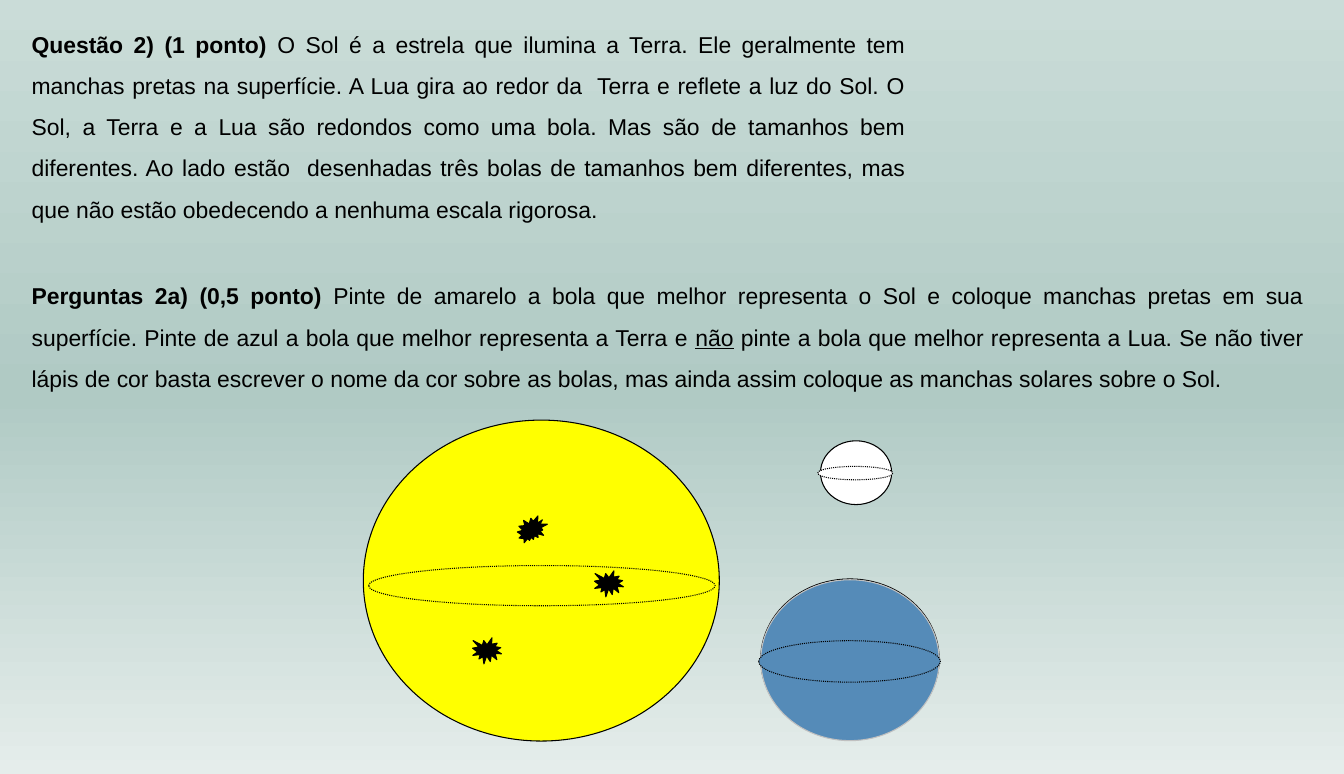
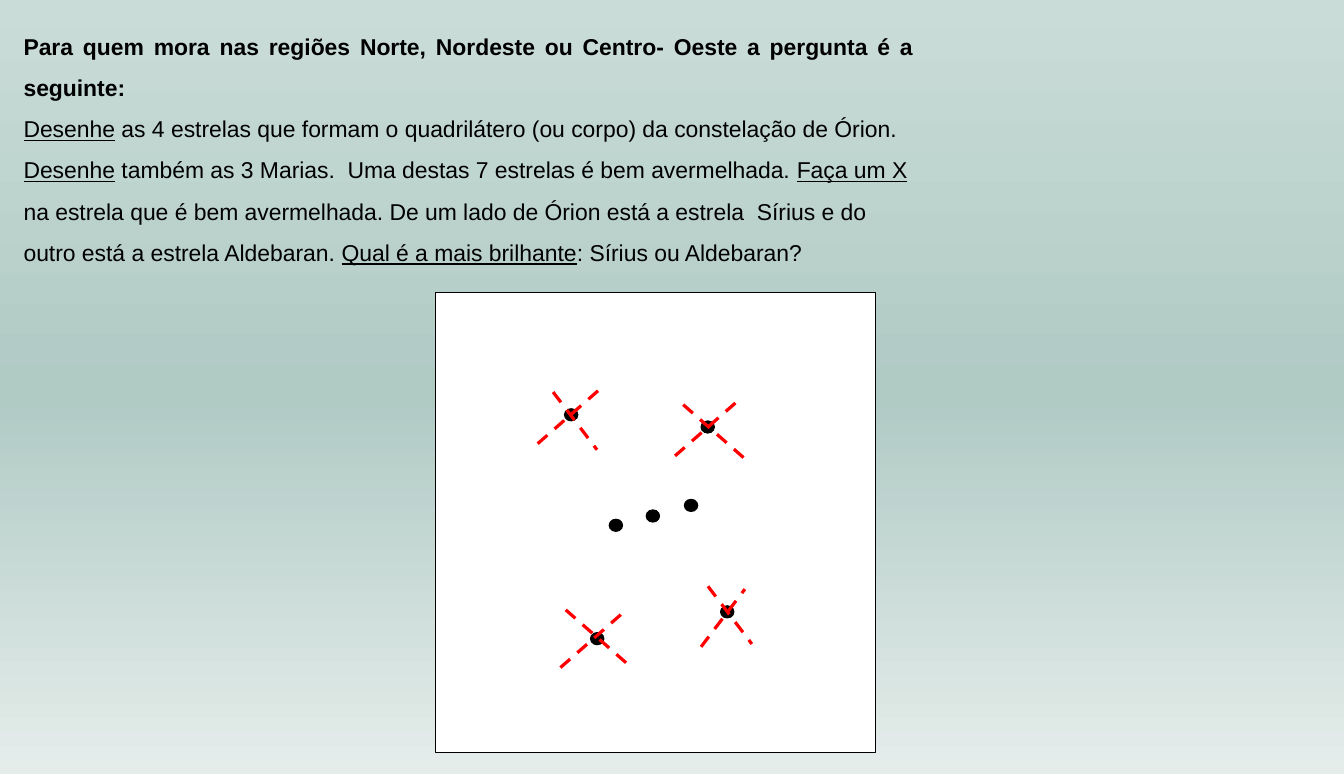
from dataclasses import dataclass

from lxml import etree
from pptx import Presentation
from pptx.dml.color import RGBColor
from pptx.enum.dml import MSO_LINE
from pptx.enum.shapes import MSO_CONNECTOR, MSO_SHAPE
from pptx.enum.text import MSO_AUTO_SIZE, PP_ALIGN
from pptx.oxml.ns import qn
from pptx.util import Cm, Pt

ELLIPSE = MSO_SHAPE.OVAL
RECTANGLE = MSO_SHAPE.RECTANGLE
SPOT = MSO_SHAPE.EXPLOSION1
LARGE_SPOT = MSO_SHAPE.EXPLOSION2
STRAIGHT = MSO_CONNECTOR.STRAIGHT
DOTTED = MSO_LINE.ROUND_DOT
DASHED = MSO_LINE.DASH
JUSTIFY = PP_ALIGN.JUSTIFY
LEFT = PP_ALIGN.LEFT
FIT_SHAPE = MSO_AUTO_SIZE.SHAPE_TO_FIT_TEXT

FONT = "Arial"
COLORS = {
    "black": "000000",
    "white": "FFFFFF",
    "sun": "FFFF00",
    "earth": "558BB8",
    "silver": "C0C0C0",
    "cross": "FF0000",
}
BACKGROUND_STOPS = ((0, "CADCD8"), (51, "B0CAC4"), (100, "E5EDEB"))

STAR_WIDTH, STAR_HEIGHT = 0.33, 0.3
STROKE_HEIGHT = 1.42
NARROW, WIDE = 1.08, 1.62


@dataclass(frozen=True)
class Box:
    left: float
    top: float
    width: float
    height: float


@dataclass(frozen=True)
class Figure:
    box: Box
    fill: str
    kind: int = ELLIPSE
    line: str = "black"
    dash: int | None = None


@dataclass(frozen=True)
class Run:
    text: str
    bold: bool = False
    underline: bool = False


@dataclass(frozen=True)
class Stroke:
    left: float
    top: float
    width: float
    rising: bool


QUESTION = [
    Run("Questão 2) (1 ponto)", bold=True),
    Run(
        " O Sol é a estrela que ilumina a Terra. Ele geralmente tem manchas pretas "
        "na superfície. A Lua gira ao redor da  Terra e reflete a luz do Sol. O Sol, "
        "a Terra e a Lua são redondos como uma bola. Mas são de tamanhos bem "
        "diferentes. Ao lado estão  desenhadas três bolas de tamanhos bem diferentes, "
        "mas que não estão obedecendo a nenhuma escala rigorosa."
    ),
]
COLORING_TASK = [
    Run("Perguntas 2a) (0,5 ponto) ", bold=True),
    Run(
        "Pinte de amarelo a bola que melhor representa o Sol e coloque manchas pretas "
        "em sua superfície. Pinte de azul a bola que melhor representa a Terra e "
    ),
    Run("não", underline=True),
    Run(
        " pinte a bola que melhor representa a Lua. Se não tiver lápis de cor basta "
        "escrever o nome da cor sobre as bolas, mas ainda assim coloque as manchas "
        "solares sobre o Sol."
    ),
]
REGIONS = [
    Run(
        "Para quem mora nas regiões Norte, Nordeste ou Centro- Oeste a pergunta é a "
        "seguinte:",
        bold=True,
    ),
]
ORION_TASK = [
    Run("Desenhe", underline=True),
    Run(" as 4 estrelas que formam o quadrilátero (ou corpo) da constelação de Órion. "),
    Run("Desenhe", underline=True),
    Run(" também as 3 Marias.  Uma destas 7 estrelas é bem avermelhada. "),
    Run("Faça um X", underline=True),
    Run(
        " na estrela que é bem avermelhada. De um lado de Órion está a estrela  Sírius "
        "e do outro está a estrela Aldebaran. "
    ),
    Run("Qual é a mais brilhante", underline=True),
    Run(": Sírius ou Aldebaran?"),
]

BALLS = [
    Figure(Box(20.19, 10.85, 1.75, 1.57), "white"),
    Figure(Box(20.12, 11.48, 1.85, 0.33), "white", dash=DOTTED),
    Figure(Box(8.94, 10.34, 8.76, 7.9), "sun"),
    Figure(Box(9.07, 13.92, 8.53, 0.99), "sun", dash=DOTTED),
    Figure(Box(12.73, 12.7, 0.74, 0.66), "black", kind=LARGE_SPOT),
    Figure(Box(11.63, 15.7, 0.71, 0.64), "black", kind=SPOT),
    Figure(Box(14.63, 14.05, 0.71, 0.64), "black", kind=SPOT),
    Figure(Box(18.72, 14.25, 4.39, 3.94), "white"),
    Figure(Box(18.72, 14.27, 4.39, 3.96), "earth", line="silver"),
    Figure(Box(18.67, 15.77, 4.47, 1.02), "earth", dash=DOTTED),
]
SKY = Figure(Box(10.72, 7.19, 10.82, 11.33), "white", kind=RECTANGLE)
STARS = [
    (13.89, 10.06),
    (17.25, 10.36),
    (14.99, 12.78),
    (15.9, 12.55),
    (16.84, 12.29),
    (14.53, 15.57),
    (17.73, 14.91),
]
CROSS_STROKES = [
    Stroke(17.42, 14.43, NARROW, rising=False),
    Stroke(17.25, 14.5, NARROW, rising=True),
    Stroke(13.61, 9.65, NARROW, rising=False),
    Stroke(13.23, 9.5, WIDE, rising=True),
    Stroke(16.61, 9.8, WIDE, rising=True),
    Stroke(16.81, 9.96, WIDE, rising=False),
    Stroke(13.79, 15.01, WIDE, rising=True),
    Stroke(13.92, 15.01, WIDE, rising=False),
]


def color(name: str) -> RGBColor:
    return RGBColor.from_string(COLORS[name])


def set_background(master) -> None:
    fill = master.background.fill
    fill.gradient()
    fill.gradient_angle = 270
    stops = next(master.element.iter(qn("a:gsLst")))
    for stop in list(stops):
        stops.remove(stop)
    for percent, value in BACKGROUND_STOPS:
        stop = etree.SubElement(stops, qn("a:gs"), pos=str(percent * 1000))
        etree.SubElement(stop, qn("a:srgbClr"), val=value)


def add_run(paragraph, text: str, *, bold: bool = False, underline: bool = False,
            size: float = 16, fill: str = "black") -> None:
    run = paragraph.add_run()
    run.text = text
    run.font.name = FONT
    run.font.size = Pt(size)
    run.font.bold = bold
    run.font.underline = underline
    run.font.color.rgb = color(fill)


def add_text(slide, box: Box, paragraphs: list[tuple[int, list[Run]]]) -> None:
    shape = slide.shapes.add_textbox(
        Cm(box.left), Cm(box.top), Cm(box.width), Cm(box.height)
    )
    frame = shape.text_frame
    frame.word_wrap = True
    frame.auto_size = FIT_SHAPE
    for index, (alignment, runs) in enumerate(paragraphs):
        paragraph = frame.add_paragraph() if index else frame.paragraphs[0]
        paragraph.alignment = alignment
        paragraph.line_spacing = 1.5
        for run in runs:
            add_run(paragraph, run.text, bold=run.bold, underline=run.underline)


def add_figure(slide, figure: Figure) -> None:
    box = figure.box
    shape = slide.shapes.add_shape(
        figure.kind, Cm(box.left), Cm(box.top), Cm(box.width), Cm(box.height)
    )
    shape.shadow.inherit = False
    shape.fill.solid()
    shape.fill.fore_color.rgb = color(figure.fill)
    shape.line.color.rgb = color(figure.line)
    shape.line.width = Pt(0.75)
    if figure.dash is not None:
        shape.line.dash_style = figure.dash


def add_stroke(slide, stroke: Stroke) -> None:
    bottom = stroke.top + STROKE_HEIGHT
    start, end = (bottom, stroke.top) if stroke.rising else (stroke.top, bottom)
    connector = slide.shapes.add_connector(
        STRAIGHT, Cm(stroke.left), Cm(start), Cm(stroke.left + stroke.width), Cm(end)
    )
    connector.line.color.rgb = color("cross")
    connector.line.width = Pt(2.25)
    connector.line.dash_style = DASHED
    etree.SubElement(connector.element.spPr, qn("a:effectLst"))


def build_balls_slide(slide) -> None:
    add_text(slide, Box(0.53, 0.28, 22, 5.38), [(JUSTIFY, QUESTION)])
    add_text(slide, Box(0.53, 6.48, 31.8, 3.33), [(JUSTIFY, COLORING_TASK)])
    for figure in BALLS:
        add_figure(slide, figure)


def build_orion_slide(slide) -> None:
    add_text(
        slide, Box(0.33, 0.33, 22.4, 6.4), [(JUSTIFY, REGIONS), (LEFT, ORION_TASK)]
    )
    add_figure(slide, SKY)
    for left, top in STARS:
        add_figure(slide, Figure(Box(left, top, STAR_WIDTH, STAR_HEIGHT), "black"))
    for stroke in CROSS_STROKES:
        add_stroke(slide, stroke)


def main() -> None:
    presentation = Presentation()
    presentation.slide_width = Cm(33.07)
    presentation.slide_height = Cm(19.05)
    set_background(presentation.slide_master)
    blank_layout = presentation.slide_layouts[6]
    for build in (build_balls_slide, build_orion_slide):
        build(presentation.slides.add_slide(blank_layout))
    presentation.save("out.pptx")


if __name__ == "__main__":
    main()
